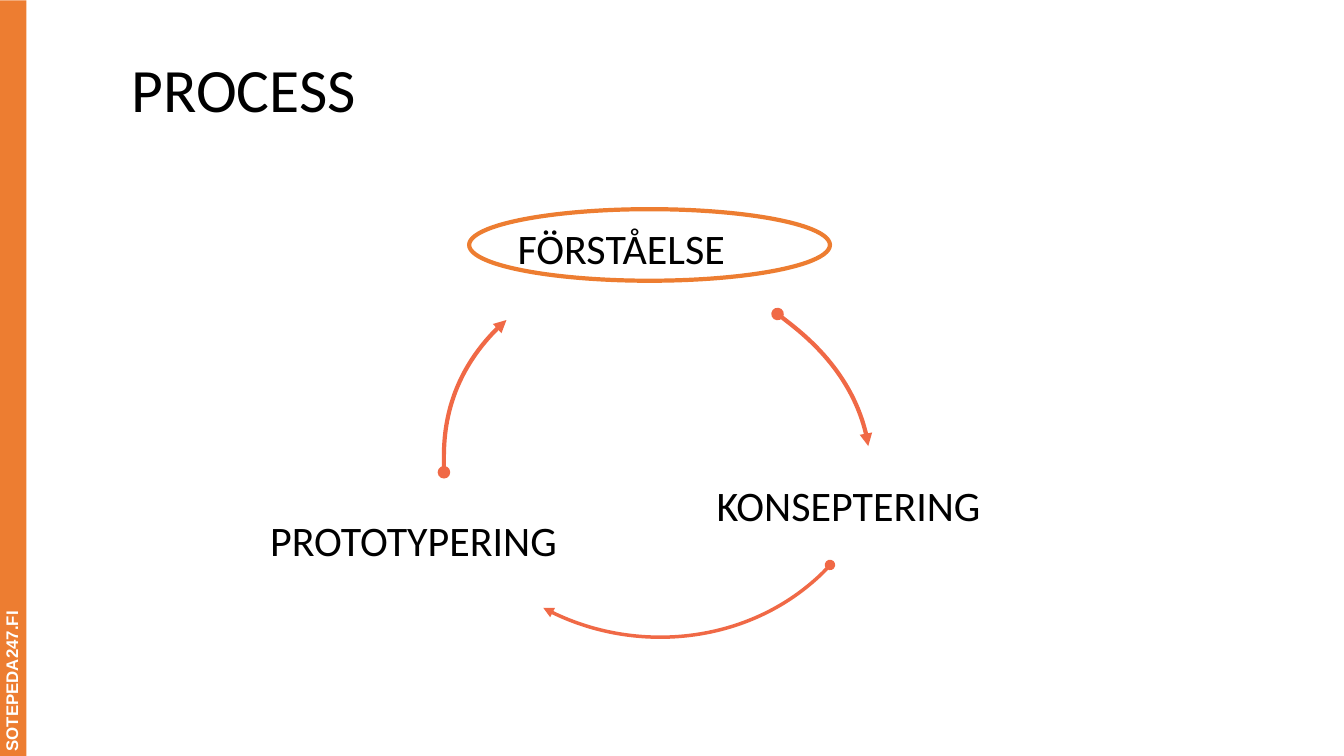
from dataclasses import dataclass

import lxml.etree
import pptx
import pptx.dml.color
import pptx.enum.shapes
import pptx.enum.text
import pptx.oxml.ns
import pptx.util

Inches = pptx.util.Inches
Pt = pptx.util.Pt
qn = pptx.oxml.ns.qn
Anchor = pptx.enum.text.MSO_ANCHOR
ShapeType = pptx.enum.shapes.MSO_SHAPE

ORANGE = "ED7D31"
CORAL = "F06946"
WHITE = "FFFFFF"
BLACK = "000000"


@dataclass(frozen=True)
class Label:
    text: str
    left: float
    top: float
    width: float
    height: float
    size: float = 60
    inset: float = 0.06
    wrap: bool = False
    anchor: Anchor = Anchor.MIDDLE
    line_spacing: float = 1.0


@dataclass(frozen=True)
class CurvedArrow:
    points: tuple[tuple[float, float], ...]
    head: str = "oval"
    tail: str = "triangle"
    width: float = 6


TITLE = Label("PROCESS", 2.54, 1.1, 22.22, 1.48, 88, 0.07, True, Anchor.TOP, 0.9)
CONCEPT = Label("KONSEPTERING", 14.16, 9.44, 5.67, 1.13)
PROTOTYPE = Label("PROTOTYPERING", 5.3, 10.15, 5.95, 1.13)
UNDERSTANDING = Label("FÖRSTÅELSE", 10.27, 4.4, 5.36, 1.01, inset=0, wrap=True)

ARROWS = (
    CurvedArrow(((15.43, 6.23), (15.43, 6.23), (17.04, 7.4), (17.23, 8.85))),
    CurvedArrow(((8.81, 9.37), (8.81, 9.37), (8.72, 7.48), (10.05, 6.35))),
    CurvedArrow(
        ((10.78, 12.06), (12.47, 12.98), (14.69, 12.77), (16.1, 11.57),
         (16.23, 11.46), (16.36, 11.34), (16.47, 11.21)),
        "triangle", "oval", 5,
    ),
)


def color(value: str) -> pptx.dml.color.RGBColor:
    return pptx.dml.color.RGBColor.from_string(value)


def write_text(shape, text: str, size: float, font_name: str, font_color: str,
               inset: float, anchor: Anchor, wrap: bool = True):
    frame = shape.text_frame
    frame.text = text
    frame.word_wrap = wrap
    frame.auto_size = pptx.enum.text.MSO_AUTO_SIZE.SHAPE_TO_FIT_TEXT
    frame.vertical_anchor = anchor
    frame.margin_left = frame.margin_right = Inches(inset)
    frame.margin_top = frame.margin_bottom = Inches(inset)
    paragraph = frame.paragraphs[0]
    paragraph.alignment = pptx.enum.text.PP_ALIGN.LEFT
    paragraph.font.name = font_name
    paragraph.font.size = Pt(size)
    paragraph.font.color.rgb = color(font_color)
    return paragraph


def add_label(slide, label: Label) -> None:
    shape = slide.shapes.add_textbox(
        Inches(label.left), Inches(label.top), Inches(label.width), Inches(label.height)
    )
    paragraph = write_text(shape, label.text, label.size, "Calibri", BLACK,
                           label.inset, label.anchor, label.wrap)
    paragraph.line_spacing = label.line_spacing


def add_side_banner(slide) -> None:
    shape = slide.shapes.add_shape(
        ShapeType.RECTANGLE, Inches(-7.28), Inches(7.2), Inches(15), Inches(0.61)
    )
    shape.rotation = 270
    shape.shadow.inherit = False
    shape.fill.solid()
    shape.fill.fore_color.rgb = color(ORANGE)
    shape.line.fill.background()
    paragraph = write_text(shape, "SOTEPEDA247.FI", 24, "Arial", WHITE, 0.1, Anchor.BOTTOM)
    paragraph.font.bold = True


def add_highlight(slide) -> None:
    shape = slide.shapes.add_shape(
        ShapeType.OVAL, Inches(9.31), Inches(4.15), Inches(7.16), Inches(1.42)
    )
    shape.shadow.inherit = False
    shape.fill.solid()
    shape.fill.fore_color.rgb = color(WHITE)
    shape.line.color.rgb = color(ORANGE)
    shape.line.width = Pt(6)


def add_curved_arrow(slide, arrow: CurvedArrow) -> None:
    start, *others = [(Inches(x), Inches(y)) for x, y in arrow.points]
    builder = slide.shapes.build_freeform(*start)
    builder.add_line_segments(others, close=False)
    shape = builder.convert_to_shape()
    shape.shadow.inherit = False
    shape.fill.background()
    shape.line.color.rgb = color(arrow.color if hasattr(arrow, "color") else CORAL)
    shape.line.width = Pt(arrow.width)

    outline = next(shape.element.iter(qn("a:path")))
    segments = outline.findall(qn("a:lnTo"))
    for index in range(0, len(segments), 3):
        curve = lxml.etree.SubElement(outline, qn("a:cubicBezTo"))
        for segment in segments[index:index + 3]:
            curve.append(segment[0])
            outline.remove(segment)

    line = shape.element.spPr.find(qn("a:ln"))
    lxml.etree.SubElement(line, qn("a:headEnd"), type=arrow.head)
    lxml.etree.SubElement(line, qn("a:tailEnd"), type=arrow.tail)


def main() -> None:
    presentation = pptx.Presentation()
    presentation.slide_width = Inches(26.67)
    presentation.slide_height = Inches(15)
    slide = presentation.slides.add_slide(presentation.slide_layouts[6])

    add_side_banner(slide)
    for label in (TITLE, CONCEPT, PROTOTYPE):
        add_label(slide, label)
    for arrow in ARROWS:
        add_curved_arrow(slide, arrow)
    add_highlight(slide)
    add_label(slide, UNDERSTANDING)

    presentation.save("out.pptx")


if __name__ == "__main__":
    main()
